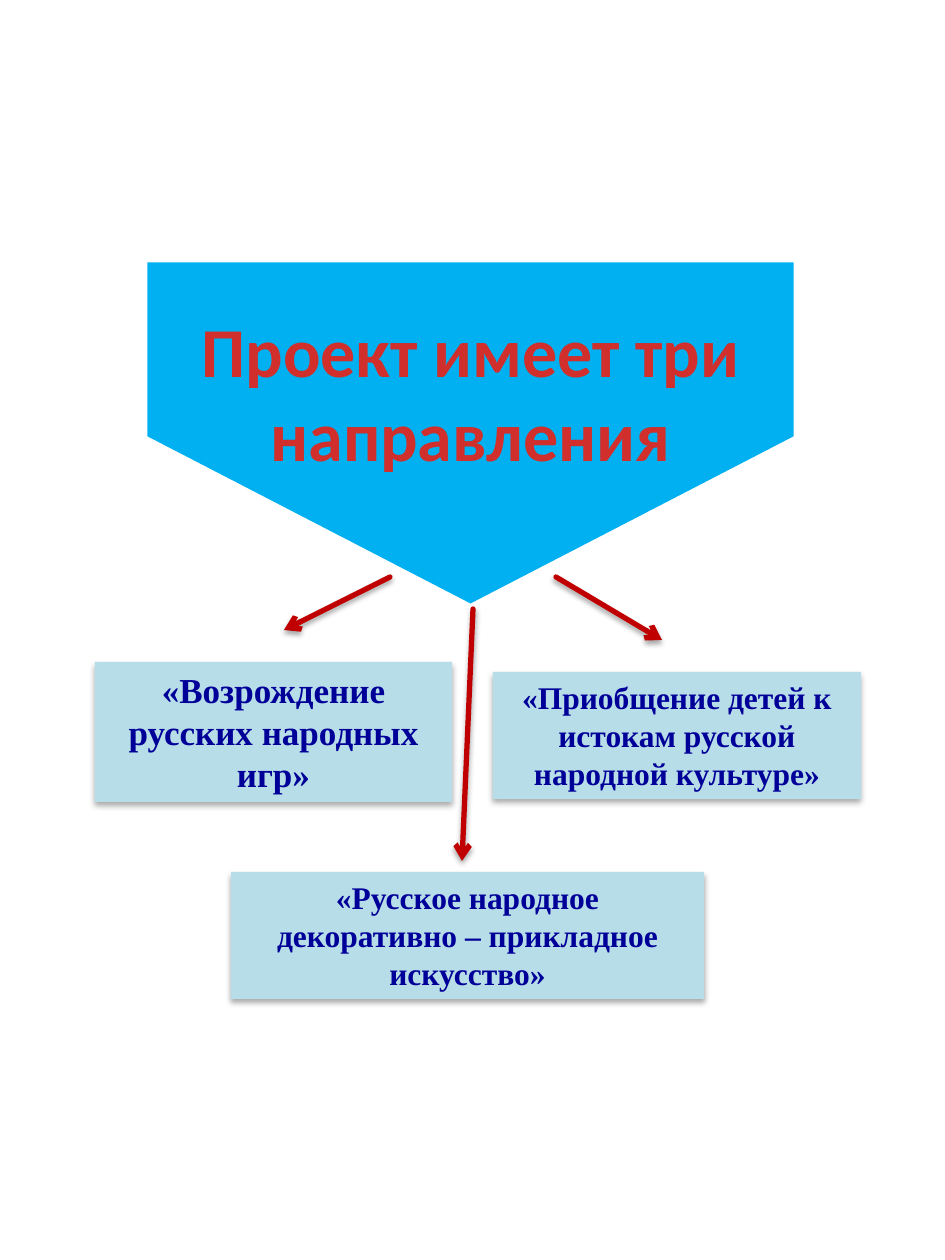
from pptx import Presentation
from pptx.dml.color import RGBColor
from pptx.enum.shapes import MSO_CONNECTOR, MSO_SHAPE
from pptx.enum.text import MSO_ANCHOR, MSO_AUTO_SIZE, PP_ALIGN
from pptx.oxml import parse_xml
from pptx.oxml.ns import nsdecls, qn
from pptx.util import Inches, Pt

PX_PER_INCH = 126
STRAIGHT = MSO_CONNECTOR.STRAIGHT
PENTAGON = MSO_SHAPE.PENTAGON
MIDDLE = MSO_ANCHOR.MIDDLE
CENTER = PP_ALIGN.CENTER
GROW = MSO_AUTO_SIZE.SHAPE_TO_FIT_TEXT

SKY, PALE, RED = "00B0F0", "B7DEE8", "C00000"
TITLE_RED, NAVY = "D02F2C", "000099"

DIRECTIONS = [
    ("«Возрождение русских народных игр»", (95, 662, 357, 140), 20),
    ("«Приобщение детей к истокам русской народной культуре»",
     (493, 672, 368, 127), 18),
    ("«Русское народное декоративно – прикладное искусство»",
     (231, 872, 473, 127), 18),
]
ARROWS = [
    (390, 577, 284, 630),
    (556, 577, 662, 640),
    (473, 609, 462, 861),
]


def px(*lengths):
    """Turn pixel lengths into a list of EMU values."""
    return [Inches(length / PX_PER_INCH) for length in lengths]


def color(value):
    """Return the colour for a hex string."""
    return RGBColor.from_string(value)


def write(shape, text, font_name, size, ink):
    """Put one centred bold paragraph into a shape."""
    frame = shape.text_frame
    frame.word_wrap = True
    frame.text = text
    paragraph = frame.paragraphs[0]
    paragraph.alignment = CENTER
    font = paragraph.runs[0].font
    font.name, font.size, font.bold = font_name, Pt(size), True
    font.color.rgb = color(ink)


def cast_shadow(shape, opacity, blur, distance):
    """Give a shape a soft black shadow falling downwards."""
    shape.element.spPr.append(parse_xml(
        f'<a:effectLst {nsdecls("a")}><a:outerShdw blurRad="{Pt(blur)}" '
        f'dist="{Pt(distance)}" dir="5400000" rotWithShape="0">'
        f'<a:srgbClr val="000000"><a:alpha val="{opacity * 1000}"/>'
        '</a:srgbClr></a:outerShdw></a:effectLst>'))


def add_heading(page, text):
    """Add the downward pentagon with upright heading text."""
    pentagon = page.shapes.add_shape(PENTAGON, *px(300, 110, 341, 646))
    pentagon.rotation = 90
    pentagon.adjustments[0] = 0.49
    pentagon.shadow.inherit = False
    pentagon.fill.solid()
    pentagon.fill.fore_color.rgb = color(SKY)
    pentagon.line.fill.background()
    write(pentagon, text, "Calibri", 40, TITLE_RED)
    pentagon.text_frame.vertical_anchor = MIDDLE
    pentagon.element.txBody.bodyPr.set("vert", "vert270")


def add_direction(page, text, bounds, size):
    """Add a shaded box naming one direction of the project."""
    box = page.shapes.add_textbox(*px(*bounds))
    box.fill.solid()
    box.fill.fore_color.rgb = color(PALE)
    box.line.fill.background()
    cast_shadow(box, 32, 3.5, 2.2)
    write(box, text, "Times New Roman", size, NAVY)
    box.text_frame.auto_size = GROW


def add_arrow(page, ends):
    """Add a red arrow between two points."""
    arrow = page.shapes.add_connector(STRAIGHT, *px(*ends))
    arrow.line.width = Pt(3)
    arrow.line.color.rgb = color(RED)
    outline = arrow.element.spPr.find(qn("a:ln"))
    outline.set("cap", "rnd")
    outline.append(parse_xml(f'<a:tailEnd {nsdecls("a")} type="arrow"/>'))
    cast_shadow(arrow, 35, 3.1, 1.8)


def main():
    """Build the slide and save it."""
    deck = Presentation()
    deck.slide_width, deck.slide_height = px(945, 1260)
    page = deck.slides.add_slide(deck.slide_layouts[6])
    add_heading(page, "Проект имеет три направления")
    for text, bounds, size in DIRECTIONS:
        add_direction(page, text, bounds, size)
    for ends in ARROWS:
        add_arrow(page, ends)
    deck.save("out.pptx")


if __name__ == "__main__":
    main()
